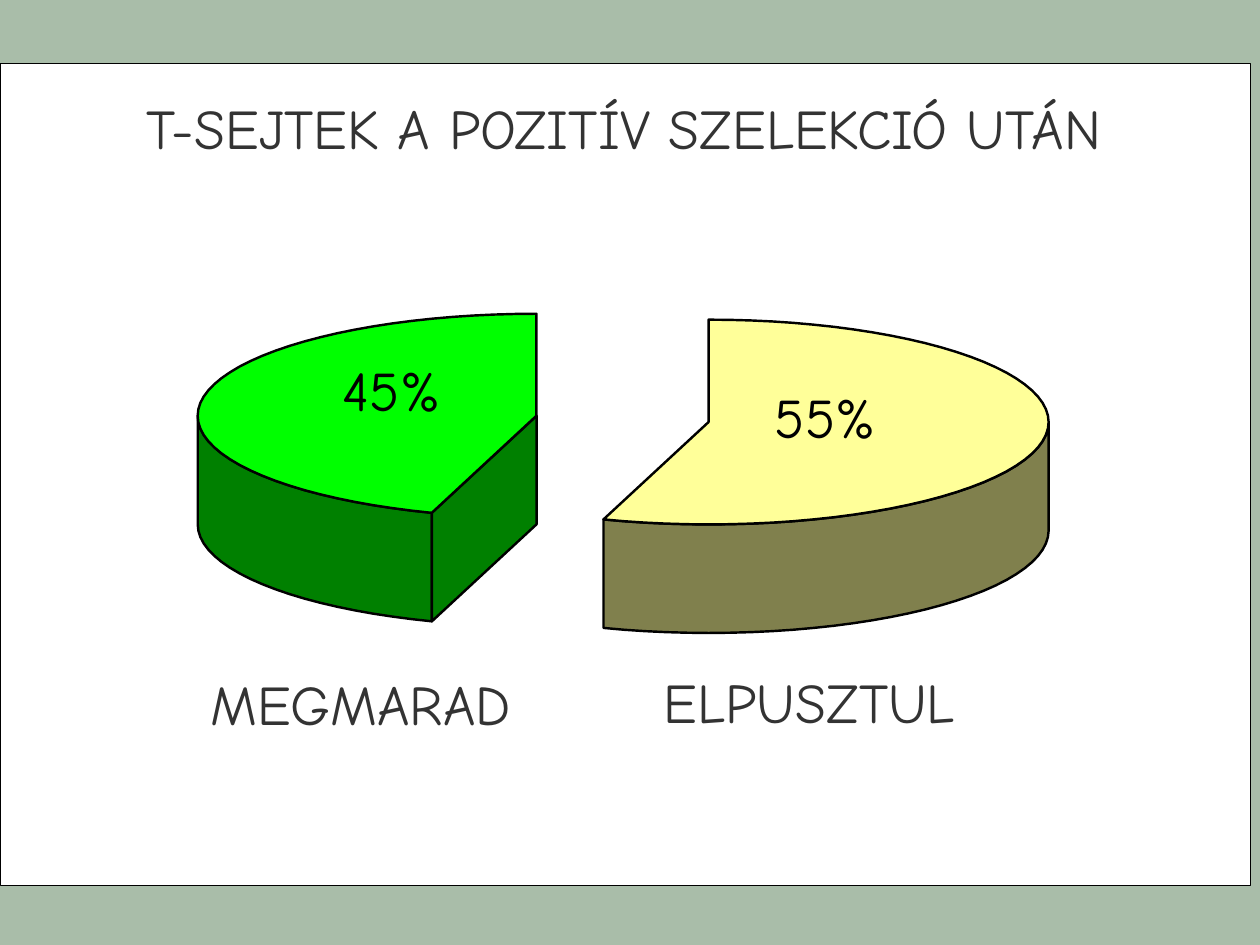
import math

from pptx import Presentation
from pptx.dml.color import RGBColor
from pptx.enum import shapes, text
from pptx.util import Pt

COLORS = {
    "background": "A9BDA9", "panel": "FFFFFF", "line": "000000",
    "text": "333333", "percent": "000000",
    "kept": "00FF00", "kept_side": "008000",
    "lost": "FFFF99", "lost_side": "80804D",
}
FONT = {"name": "Comic Neue", "size": Pt(32), "bold": False}
DEPTH = 62


def color(name):
    return RGBColor.from_string(COLORS[name])


def paint(shape, fill, width):
    shape.shadow.inherit = False
    shape.fill.solid()
    shape.fill.fore_color.rgb = color(fill)
    shape.line.color.rgb = color("line")
    shape.line.width = Pt(width)


def move(shape, box):
    shape.left, shape.top, shape.width, shape.height = map(Pt, box)


def write(shape, words, ink="text", align=text.PP_ALIGN.LEFT, **frame):
    tf = shape.text_frame
    settings = {"word_wrap": True, "vertical_anchor": text.MSO_ANCHOR.TOP,
                "auto_size": text.MSO_AUTO_SIZE.SHAPE_TO_FIT_TEXT}
    for key, value in {**settings, **frame}.items():
        setattr(tf, key, value)
    p = tf.paragraphs[0]
    p.alignment = align
    r = p.add_run()
    r.text = words
    for key, value in FONT.items():
        setattr(r.font, key, value)
    r.font.color.rgb = color(ink)


def add_label(s, box, words, **options):
    write(s.shapes.add_textbox(*map(Pt, box)), words, **options)


def add_outline(s, points, fill):
    corners = [(Pt(x), Pt(y)) for x, y in points]
    builder = s.shapes.build_freeform(*corners[0], scale=1.0)
    builder.add_line_segments(corners[1:], close=True)
    paint(builder.convert_to_shape(), fill, 1.38)


def lowered(points):
    return [(x, y + DEPTH) for x, y in points]


def add_slice(s, box, start, end, name):
    """Draw the share from start to end percent of the ellipse in box."""
    left, top, width, height = box
    center = (left + width / 2, top + height / 2)

    def arc(first, last):
        angles = [math.tau * n / 100 for n in range(first, last + 1)]
        return [(center[0] + width / 2 * math.sin(a),
                 center[1] - height / 2 * math.cos(a)) for a in angles]

    front = arc(max(start, 25), min(end, 75))
    add_outline(s, front + lowered(front)[::-1], name + "_side")
    if start > 50:
        cut = [center, front[0]]
        add_outline(s, cut + lowered(cut)[::-1], name + "_side")
    add_outline(s, [center] + arc(start, end), name)


def add_panel(s, box):
    panel = s.shapes.add_shape(shapes.MSO_SHAPE.RECTANGLE, *map(Pt, box))
    paint(panel, "panel", 0.25)
    # The panel lies behind the title placeholder.
    s.shapes._spTree.insert(2, panel._element)


def add_pie(s, box):
    """Draw the two pulled-apart slices with percentages and captions."""
    left, top = box[:2]
    add_slice(s, (left, top, 387.2, 116.6), 55, 100, "kept")
    add_slice(s, (left + 97.6, top + 3.4, 388.6, 117), 0, 55, "lost")
    for x, y, words in ((329.8, 39, "55%"), (82.8, 23.8, "45%")):
        add_label(s, (left + x, top + y, 65.5, 38), words, ink="percent",
                  word_wrap=False, margin_left=0, margin_top=0,
                  margin_right=0, margin_bottom=0)
    for x, y, words in ((0, 199.5, "MEGMARAD"), (259.2, 198.6, "ELPUSZTUL")):
        add_label(s, (left + x, top + y, 202.5, 45.4), words)


def build_slide(prs):
    s = prs.slides.add_slide(prs.slide_layouts[5])
    s.background.fill.solid()
    s.background.fill.fore_color.rgb = color("background")
    add_panel(s, (0, 36, 714.2, 470))
    add_pie(s, (113, 179.3, 486.2, 244))
    title = s.shapes.title
    move(title, (11.5, 49.7, 690.5, 45.4))
    write(title, "T-SEJTEK A POZITÍV SZELEKCIÓ UTÁN",
          align=text.PP_ALIGN.CENTER)


def main():
    prs = Presentation()
    prs.slide_width, prs.slide_height = Pt(720), Pt(540)
    build_slide(prs)
    prs.save("out.pptx")


if __name__ == "__main__":
    main()
